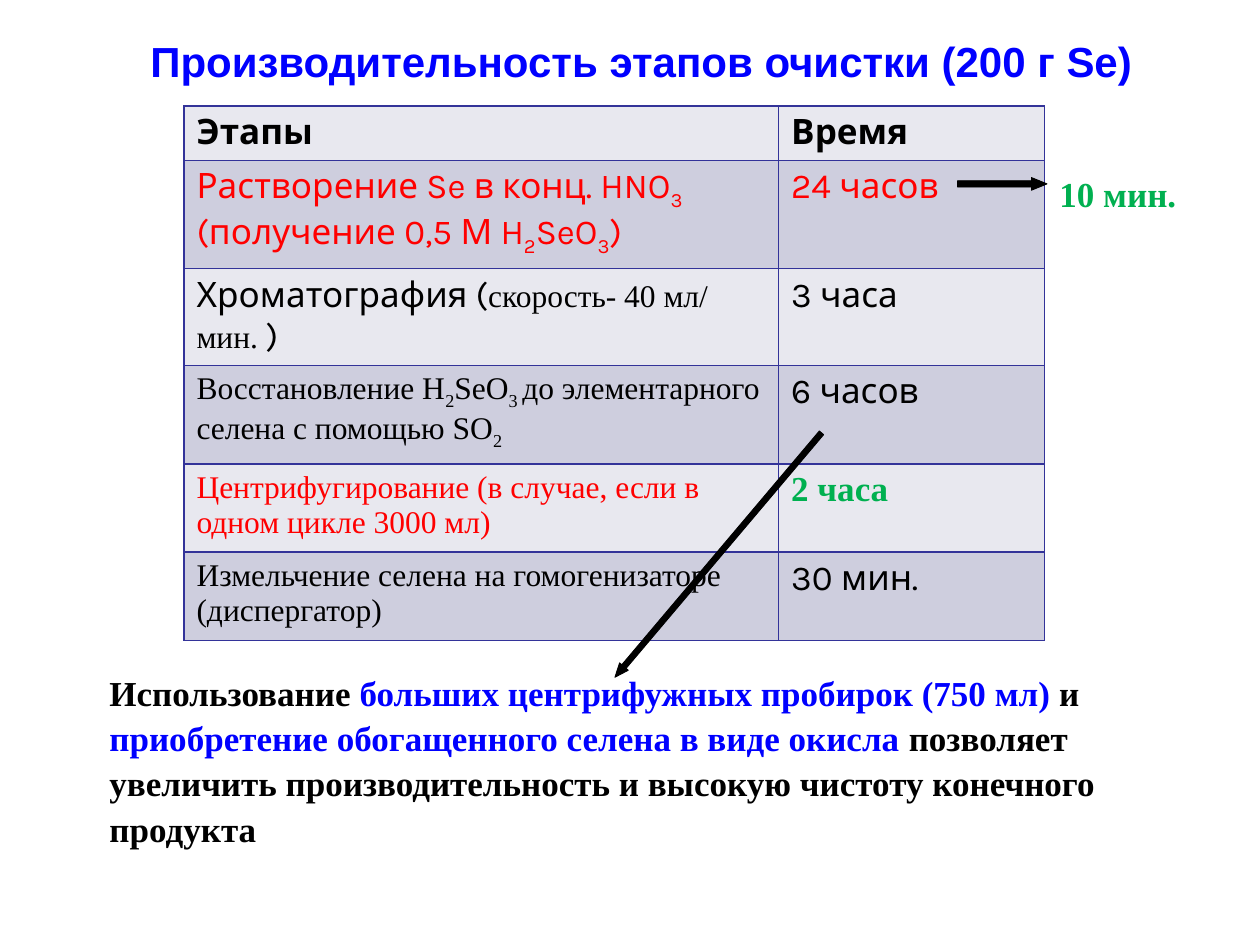
from dataclasses import dataclass
from typing import NamedTuple

from lxml.etree import SubElement
from pptx import Presentation
from pptx.dml.color import RGBColor as Color
from pptx.enum.shapes import MSO_SHAPE as Preset
from pptx.enum.text import MSO_ANCHOR as Anchor, PP_ALIGN as Align
from pptx.oxml.ns import qn
from pptx.util import Inches, Pt


@dataclass(frozen=True)
class Theme:
    """Colours, fonts and type sizes of the slide."""
    black: str = "000000"
    blue: str = "0000FF"
    red: str = "FF0000"
    green: str = "00B050"
    border: str = "333399"
    bands: tuple = ("E8E8EF", "CECEDE")
    heading: str = "Arial"
    sans: str = "Karla"
    serif: str = "Times New Roman"
    title: int = 24
    large: int = 20
    small: int = 18


THEME = Theme()
COLUMNS, ROWS = 100, 75
WIDTH, HEIGHT = Inches(10), Inches(7.5)


class Box(NamedTuple):
    """Left, top, width and height in grid columns and rows."""
    left: float
    top: float
    width: float
    height: float

    def place(self) -> tuple:
        """Return the box in slide units."""
        return (across(self.left), down(self.top), across(self.width), down(self.height))


class Span(NamedTuple):
    """Text of one format; parts between underscores are subscripts."""
    text: str
    color: str = THEME.black
    font: str = THEME.sans
    size: int = THEME.large
    bold: bool = False


class Stage(NamedTuple):
    """One table row: its height in grid rows, the stage and its time."""
    height: float
    name: list
    time: list


class Arrow(NamedTuple):
    """A block arrow with its head length as a share of its thickness."""
    box: Box
    rotation: float
    head: float = 1.23


def across(columns: float) -> int:
    """Convert grid columns to slide units."""
    return round(WIDTH * columns / COLUMNS)


def down(rows: float) -> int:
    """Convert grid rows to slide units."""
    return round(HEIGHT * rows / ROWS)


def serif(text: str, color: str = THEME.black) -> Span:
    """Return a small serif span."""
    return Span(text, color, THEME.serif, THEME.small)


def strong(text: str, color: str = THEME.black) -> Span:
    """Return a large bold serif span."""
    return Span(text, color, THEME.serif, bold=True)


STAGES = [
    Stage(4.2, [Span("Этапы", bold=True)], [Span("Время", bold=True)]),
    Stage(8.3, [Span("Растворение Se в конц. HNO_3_\v(получение 0,5 М H_2_SeO_3_)", THEME.red)],
          [Span("24 часов", THEME.red)]),
    Stage(7.5, [Span("Хроматография ("), serif("скорость- 40 мл/ мин. "), Span(")")],
          [Span("3 часа")]),
    Stage(7.3, [serif("Восстановление H_2_SeO_3 _до элементарного селена с помощью SO_2_")],
          [Span("6 часов")]),
    Stage(6.6, [serif("Центрифугирование (в случае, если в одном цикле 3000 мл)", THEME.red)],
          [strong("2 часа", THEME.green)]),
    Stage(6.5, [serif("Измельчение селена на гомогенизаторе (диспергатор)")],
          [Span("30 мин.")]),
]
STAGE_COLUMNS = (47.2, 21.1)
TITLE = [Span("Производительность этапов очистки (200 г Se)", THEME.blue, THEME.heading,
              THEME.title, True)]
CONCLUSION = [
    strong("Использование "),
    strong("больших центрифужных пробирок (750 мл) ", THEME.blue),
    strong("и "),
    strong("приобретение обогащенного селена в виде окисла", THEME.blue),
    strong(" позволяет увеличить производительность и высокую чистоту конечного продукта"),
]
ARROWS = [Arrow(Box(76, 14.1, 7.1, 1), 0), Arrow(Box(44.3, 43.6, 25.4, 0.9), 130.2)]


def write(paragraph, spans: list) -> None:
    """Add the spans to a paragraph."""
    for span in spans:
        for index, part in enumerate(span.text.split("_")):
            for line, text in enumerate(part.split("\v")):
                if line:
                    paragraph.add_line_break()
                if not text:
                    continue
                run = paragraph.add_run()
                run.text = text
                formats = {"name": span.font, "size": Pt(span.size), "bold": span.bold}
                for name, value in formats.items():
                    setattr(run.font, name, value)
                run.font.color.rgb = Color.from_string(span.color)
                if index % 2:
                    run._r.get_or_add_rPr().set("baseline", "-25000")


def add_text(slide, box: Box, spans: list, anchor=Anchor.TOP, align=Align.LEFT,
             spacing: float = 1.08) -> None:
    """Add a wrapped text box."""
    frame = slide.shapes.add_textbox(*box.place()).text_frame
    for name, value in {"word_wrap": True, "vertical_anchor": anchor}.items():
        setattr(frame, name, value)
    paragraph = frame.paragraphs[0]
    for name, value in {"alignment": align, "line_spacing": spacing}.items():
        setattr(paragraph, name, value)
    write(paragraph, spans)


def add_borders(cell) -> None:
    """Draw a thin border on every side of a cell."""
    properties = cell._tc.get_or_add_tcPr()
    for index, side in enumerate(("a:lnL", "a:lnR", "a:lnT", "a:lnB")):
        line = properties.makeelement(qn(side), {"w": str(Pt(1))})
        properties.insert(index, line)
        fill = SubElement(line, qn("a:solidFill"))
        SubElement(fill, qn("a:srgbClr"), val=THEME.border)


def add_stages(slide, left: float, top: float) -> None:
    """Add the table of stages and times."""
    box = Box(left, top, sum(STAGE_COLUMNS), sum(stage.height for stage in STAGES))
    table = slide.shapes.add_table(len(STAGES), len(STAGE_COLUMNS), *box.place()).table
    for name in ("first_row", "horz_banding"):
        setattr(table, name, False)
    for column, width in zip(table.columns, STAGE_COLUMNS):
        column.width = across(width)
    for index, (row, stage) in enumerate(zip(table.rows, STAGES)):
        row.height = down(stage.height)
        for cell, spans in zip(row.cells, (stage.name, stage.time)):
            cell.fill.solid()
            cell.fill.fore_color.rgb = Color.from_string(THEME.bands[index % 2])
            add_borders(cell)
            write(cell.text_frame.paragraphs[0], spans)


def add_arrow(slide, arrow: Arrow) -> None:
    """Add a black block arrow."""
    shape = slide.shapes.add_shape(Preset.RIGHT_ARROW, *arrow.box.place())
    shape.rotation = arrow.rotation
    shape.adjustments[1] = arrow.head
    shape.shadow.inherit = False
    shape.fill.solid()
    shape.line.width = Pt(0.5)
    for color in (shape.fill.fore_color, shape.line.color):
        color.rgb = Color.from_string(THEME.black)


def main() -> None:
    """Build and save the slide."""
    presentation = Presentation()
    presentation.slide_width, presentation.slide_height = WIDTH, HEIGHT
    slide = presentation.slides.add_slide(presentation.slide_layouts[6])
    add_text(slide, Box(5.9, 1.3, 90, 7.1), TITLE, Anchor.MIDDLE, Align.CENTER, 1)
    add_stages(slide, 14.6, 8.4)
    add_text(slide, Box(7.7, 52.5, 88.2, 14.5), CONCLUSION)
    add_text(slide, Box(83.1, 12.9, 11.8, 4.4), [strong("10 мин.", THEME.green)])
    for arrow in ARROWS:
        add_arrow(slide, arrow)
    presentation.save("out.pptx")


if __name__ == "__main__":
    main()
